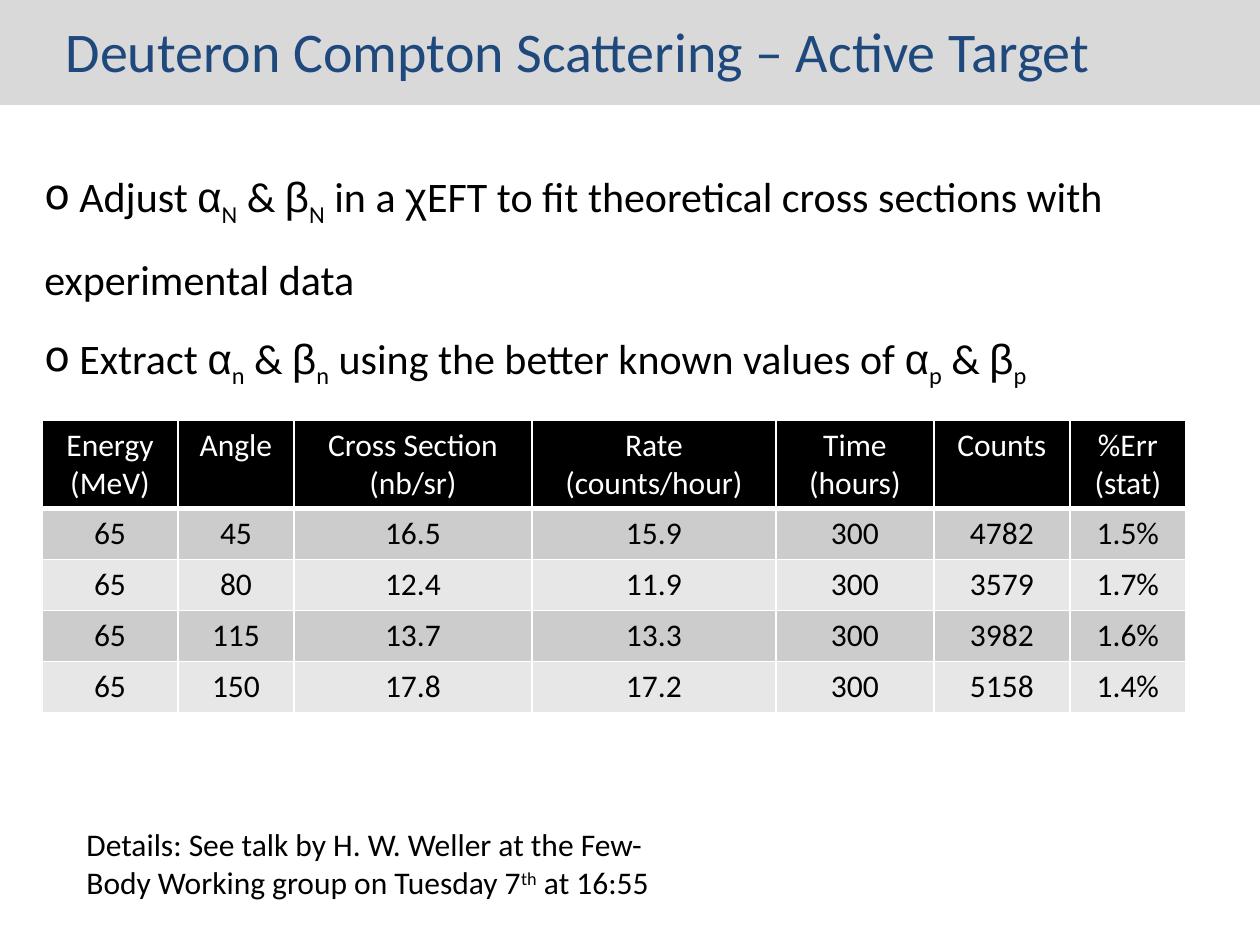
"""Build the slide on deuteron Compton scattering with an active target."""
from lxml.etree import SubElement as Sub
from pptx import Presentation
from pptx.dml.color import RGBColor
from pptx.enum.shapes import MSO_SHAPE as Shape
from pptx.enum.text import MSO_ANCHOR as Anchor, MSO_AUTO_SIZE as Fit, PP_ALIGN as Align
from pptx.oxml.ns import qn
from pptx.util import Emu, Pt

UNIT = 914400 // 126
BASE = {"_": "-25000", "^": "30000"}
GREEK = "αβχ"
NOTES = [
    " Adjust |α|_N| & |β|_N| in a |χ|EFT to fit theoretical cross sections with experimental data",
    " Extract |α|_n| & |β|_n| using the better known values of |α|_p| & |β|_p",
]
TALK = "Details: See talk by H. W. Weller at the Few-Body Working group on Tuesday 7|^th| at 16:55"
WIDTHS = [136, 116, 238, 244, 158, 136, 116]
ROWS = [
    ["Energy (MeV)", "Angle", "Cross Section (nb/sr)", "Rate (counts/hour)",
     "Time (hours)", "Counts", "%Err (stat)"],
    ["65", "45", "16.5", "15.9", "300", "4782", "1.5%"],
    ["65", "80", "12.4", "11.9", "300", "3579", "1.7%"],
    ["65", "115", "13.7", "13.3", "300", "3982", "1.6%"],
    ["65", "150", "17.8", "17.2", "300", "5158", "1.4%"],
]


def px(*sizes):
    return [Emu(size * UNIT) for size in sizes]


def rgb(code):
    return RGBColor.from_string(code)


class Deck:
    """Hold the style and the current slide."""

    def __init__(self):
        self.face, self.math = "Calibri", "Arial"
        self.ink, self.blue, self.gray = "000000", "1F497D", "D9D9D9"
        self.line, self.head, self.bands = "FFFFFF", "000000", ["CCCCCC", "E7E7E7"]
        self.show = Presentation()
        self.show.slide_width, self.show.slide_height = px(1260, 945)
        self.slide = self.show.slides.add_slide(self.show.slide_layouts[5])

    def font(self, para, size, color):
        para.font.name, para.font.size = self.face, Pt(size)
        para.font.color.rgb = rgb(color)

    def band(self, *box):
        bar = self.slide.shapes.add_shape(Shape.RECTANGLE, *px(*box))
        bar.shadow.inherit = False
        bar.fill.solid()
        bar.fill.fore_color.rgb = rgb(self.gray)
        bar.line.fill.background()

    def title(self, text, *box):
        name = self.slide.shapes.title
        self.slide.shapes._spTree.append(name._element)
        name.left, name.top, name.width, name.height = px(*box)
        frame = name.text_frame
        frame.text = text
        frame.word_wrap, frame.auto_size = False, Fit.SHAPE_TO_FIT_TEXT
        frame.vertical_anchor = Anchor.TOP
        para = frame.paragraphs[0]
        para.alignment = Align.LEFT
        self.font(para, 32, self.blue)

    def runs(self, para, text):
        for part in text.split("|"):
            run = para.add_run()
            run.text = part.lstrip("_^")
            if part in GREEK:
                run.font.name = self.math
            if part[0] in BASE:
                run.font._element.set("baseline", BASE[part[0]])

    def text(self, lines, size, *box, bullet=None, space=None):
        frame = self.slide.shapes.add_textbox(*px(*box)).text_frame
        frame.word_wrap, frame.auto_size = True, Fit.SHAPE_TO_FIT_TEXT
        for i, line in enumerate(lines):
            para = frame.add_paragraph() if i else frame.paragraphs[0]
            para.line_spacing = space
            if bullet:
                Sub(para._p.get_or_add_pPr(), qn("a:buChar"), char=bullet)
            self.font(para, size, self.ink)
            self.runs(para, line)

    def edge(self, cell, side, width):
        line = Sub(cell._tc.get_or_add_tcPr(), qn(f"a:ln{side}"), w=str(Pt(width)))
        Sub(Sub(line, qn("a:solidFill")), qn("a:srgbClr"), val=self.line)

    def cell(self, cell, text, fill, color, base):
        for side in "LRTB":
            self.edge(cell, side, base if side == "B" else 1)
        cell.fill.solid()
        cell.fill.fore_color.rgb = rgb(fill)
        cell.text = text
        para = cell.text_frame.paragraphs[0]
        para.alignment = Align.CENTER
        self.font(para, 18, color)
        para.font.bold = False

    def table(self, rows, widths, left, top, first, rest):
        high = first + rest * (len(rows) - 1)
        box = px(left, top, sum(widths), high)
        grid = self.slide.shapes.add_table(len(rows), len(widths), *box).table
        for col, width in zip(grid.columns, px(*widths)):
            col.width = width
        for i, row in enumerate(rows):
            grid.rows[i].height = px(rest if i else first)[0]
            look = (self.bands[(i - 1) % 2], self.ink, 1) if i else (self.head, self.line, 3)
            for j, text in enumerate(row):
                self.cell(grid.cell(i, j), text, *look)


def main():
    deck = Deck()
    deck.band(0, 0, 1260, 105)
    deck.text(NOTES, 24, 32, 136, 1197, 242, bullet="o", space=1.5)
    deck.title("Deuteron Compton Scattering – Active Target", 53, 10, 1062, 81)
    deck.table(ROWS, WIDTHS, 42, 420, 88, 51)
    deck.text([TALK], 18, 74, 819, 624, 89)
    deck.show.save("out.pptx")


if __name__ == "__main__":
    main()
